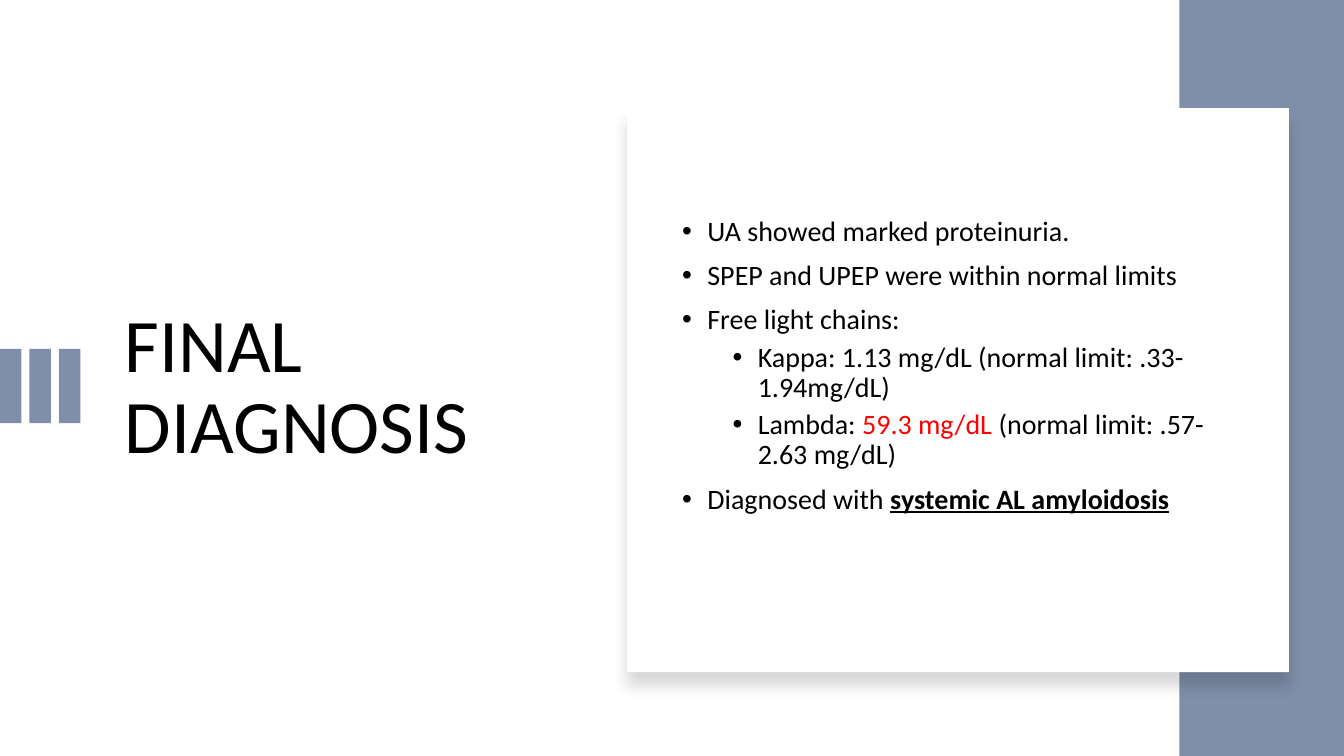
from lxml import etree
from pptx import Presentation
from pptx.dml.color import RGBColor
from pptx.enum.shapes import MSO_SHAPE
from pptx.enum.text import MSO_ANCHOR
from pptx.oxml import parse_xml
from pptx.oxml.ns import qn
from pptx.util import Pt

RECTANGLE = MSO_SHAPE.RECTANGLE
MIDDLE = MSO_ANCHOR.MIDDLE
BLACK = RGBColor(0x00, 0x00, 0x00)
WHITE = RGBColor(0xFF, 0xFF, 0xFF)
RED = RGBColor(0xFF, 0x00, 0x00)
SLATE = RGBColor(0x7F, 0x8F, 0xA9)
FONT = "Calibri"
DRAWING_NS = "http://schemas.openxmlformats.org/drawingml/2006/main"

presentation = Presentation()
presentation.slide_width = Pt(960)
presentation.slide_height = Pt(540)
slide = presentation.slides.add_slide(presentation.slide_layouts[6])


def add_panel(left, top, width, height, color):
    panel = slide.shapes.add_shape(RECTANGLE, Pt(left), Pt(top), Pt(width), Pt(height))
    panel.shadow.inherit = False
    panel.fill.solid()
    panel.fill.fore_color.rgb = color
    panel.line.fill.background()
    return panel


def add_text_frame(left, top, width, height):
    frame = slide.shapes.add_textbox(Pt(left), Pt(top), Pt(width), Pt(height)).text_frame
    frame.word_wrap = True
    frame.vertical_anchor = MIDDLE
    return frame


for stripe in range(3):
    add_panel(stripe * 21.1, 249.1, 15.3, 53.2, SLATE)
add_panel(842.4, 0, 117.6, 540, SLATE)
card = add_panel(447.9, 77.2, 472.8, 403, WHITE)
card_effects = card.element.spPr.find(qn("a:effectLst"))
card_effects.append(parse_xml(
    f'<a:outerShdw xmlns:a="{DRAWING_NS}" blurRad="139700" dist="127000" '
    'dir="5400000" algn="t" rotWithShape="0">'
    '<a:srgbClr val="000000"><a:alpha val="15000"/></a:srgbClr></a:outerShdw>'
))

title = add_text_frame(82.1, 105.1, 306.7, 344.9).paragraphs[0]
title.line_spacing = 0.9
title_run = title.add_run()
title_run.text = "FINAL DIAGNOSIS"
title_run.font.size = Pt(54)
title_run.font.name = FONT
title_run.font.color.rgb = BLACK

findings = [
    (0, [("UA showed marked proteinuria.", BLACK, False)]),
    (0, [("SPEP and UPEP were within normal limits", BLACK, False)]),
    (0, [("Free light chains:", BLACK, False)]),
    (1, [("Kappa: 1.13 mg/dL (normal limit: .33-1.94mg/dL)", BLACK, False)]),
    (1, [("Lambda: ", BLACK, False), ("59.3 mg/dL ", RED, False),
         ("(normal limit: .57-2.63 mg/dL)", BLACK, False)]),
    (0, [("Diagnosed with ", BLACK, False), ("systemic AL amyloidosis", BLACK, True)]),
]
findings_frame = add_text_frame(480.2, 105.1, 414, 313)
for index, (level, pieces) in enumerate(findings):
    finding = findings_frame.paragraphs[0] if index == 0 else findings_frame.add_paragraph()
    finding.level = level
    finding.line_spacing = 0.9
    finding.space_before = Pt(0 if index == 0 else 5 if level else 10)
    properties = finding._p.get_or_add_pPr()
    properties.set("marL", str(Pt(54 if level else 18)))
    properties.set("indent", str(Pt(-18)))
    bullet_color = etree.SubElement(properties, qn("a:buClr"))
    etree.SubElement(bullet_color, qn("a:srgbClr"), val=str(BLACK))
    etree.SubElement(properties, qn("a:buFont"), typeface="Arial")
    etree.SubElement(properties, qn("a:buChar"), char="•")
    for wording, color, emphasized in pieces:
        run = finding.add_run()
        run.text = wording
        run.font.size = Pt(20)
        run.font.name = FONT
        run.font.color.rgb = color
        if emphasized:
            run.font.bold = True
            run.font.underline = True

presentation.save("out.pptx")
